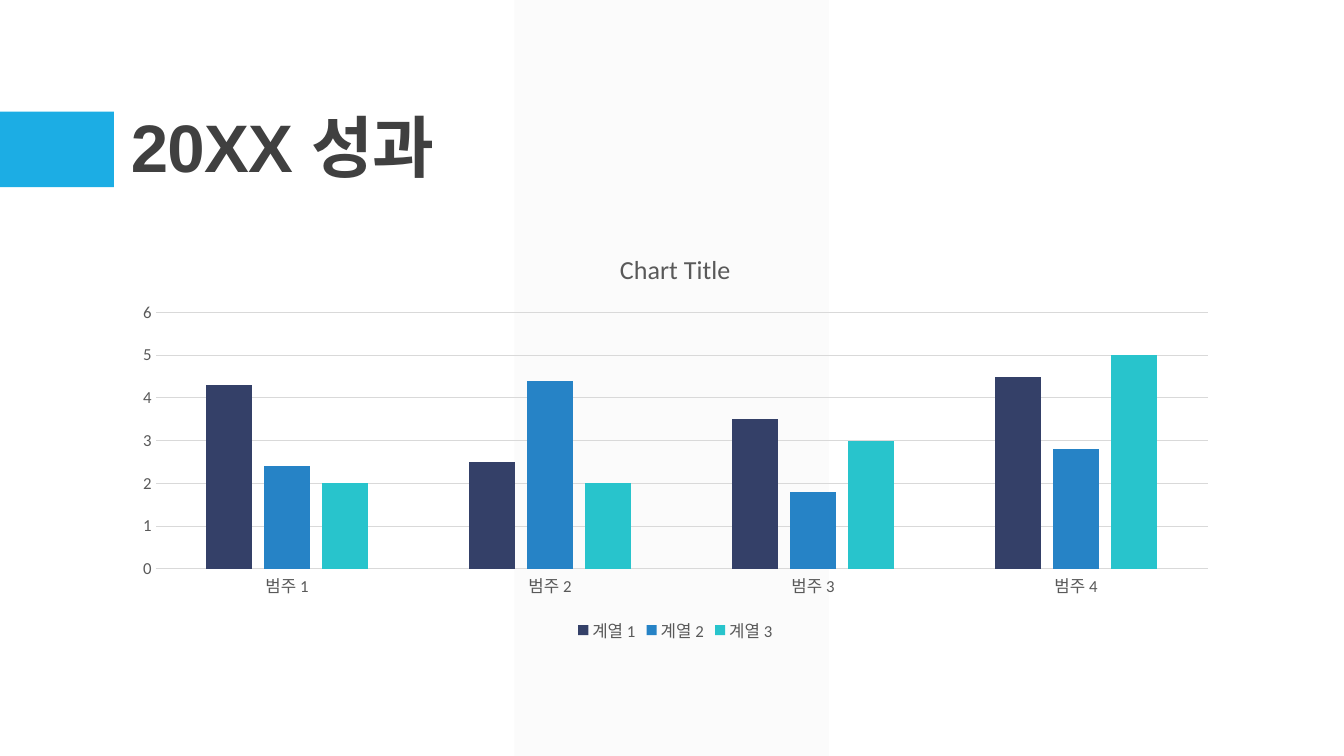
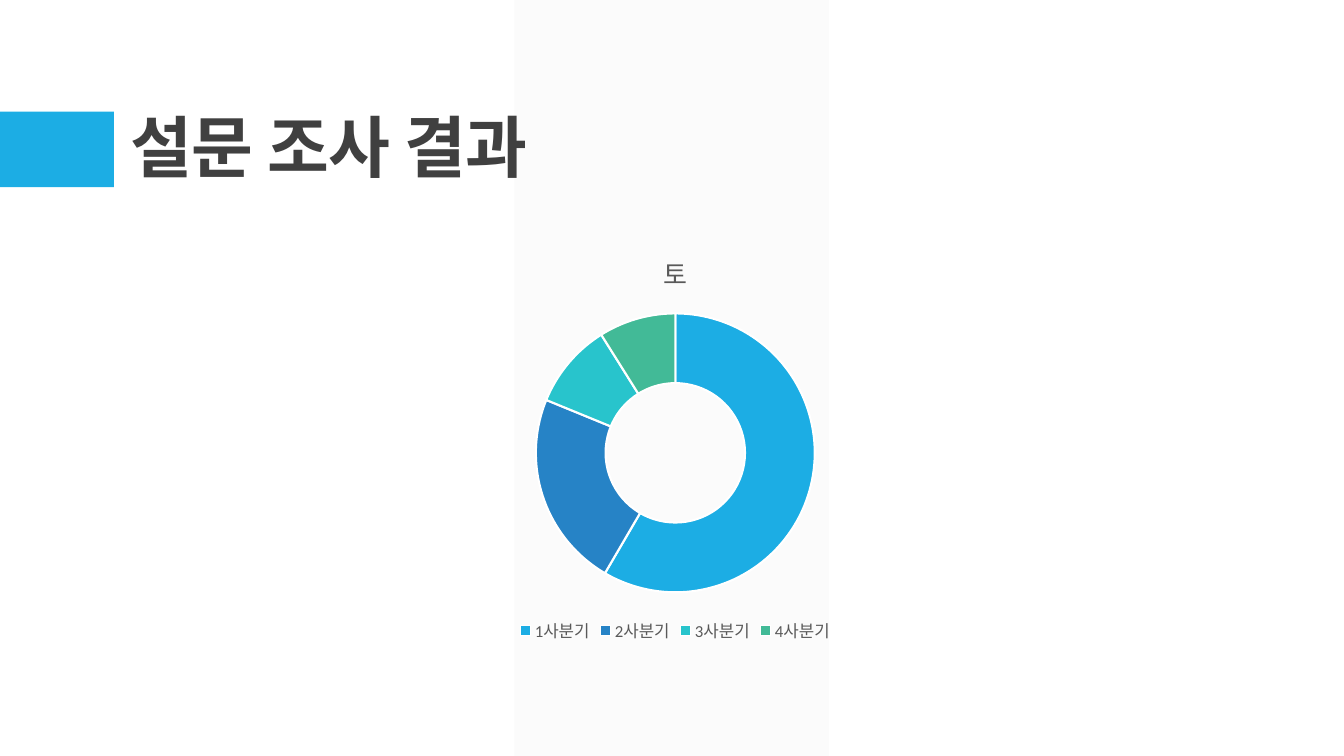
import dataclasses

import lxml.etree
import pptx
import pptx.chart.data
import pptx.dml.color
import pptx.enum.chart
import pptx.enum.shapes
import pptx.enum.text
import pptx.oxml.ns
import pptx.util

Pt = pptx.util.Pt
qn = pptx.oxml.ns.qn


@dataclasses.dataclass(frozen=True)
class Theme:
    title_font: str = "Arial"
    chart_font: str = "Calibri"
    title_size: float = 48
    chart_title_size: float = 18.6
    label_size: float = 12
    title_ink: str = "404040"
    label_ink: str = "595959"
    grid: str = "D9D9D9"
    band: str = "F2F2F2"
    white: str = "FFFFFF"
    sky: str = "1CADE4"
    navy: str = "344068"
    blue: str = "2683C6"
    teal: str = "28C4CC"
    green: str = "42BA97"


@dataclasses.dataclass(frozen=True)
class Box:
    left: float
    top: float
    width: float
    height: float

    def lengths(self):
        return [Pt(value) for value in dataclasses.astuple(self)]


THEME = Theme()
SLIDE_WIDTH, SLIDE_HEIGHT = 960, 540
BAND_BOX = Box(367.5, 0, 224.5, SLIDE_HEIGHT)
ACCENT_BOX = Box(0, 79.7, 81.4, 54)
TITLE_BOX = Box(86.4, 22.3, 792, 114.5)
CHART_BOX = Box(86.4, 166, 792, 296)


def rgb(color):
    return pptx.dml.color.RGBColor.from_string(color)


def set_font(font, size, color, name, bold=False):
    font.size = Pt(size)
    font.color.rgb = rgb(color)
    font.name = name
    font.bold = bold


def paint(fill, color):
    fill.solid()
    fill.fore_color.rgb = rgb(color)


def add_block(slide, box, preset, color):
    block = slide.shapes.add_shape(preset, *box.lengths())
    block.shadow.inherit = False
    paint(block.fill, color)
    block.line.fill.background()
    return block


def add_backdrop(slide):
    presets = pptx.enum.shapes.MSO_SHAPE
    band = add_block(slide, BAND_BOX, presets.PARALLELOGRAM, THEME.band)
    band.adjustments[0] = 0
    band_color = band.fill._xPr.find(qn("a:solidFill"))[0]
    lxml.etree.SubElement(band_color, qn("a:alpha"), val="30000")
    add_block(slide, ACCENT_BOX, presets.RECTANGLE, THEME.sky)


def add_title(slide, box, text):
    frame = slide.shapes.add_textbox(*box.lengths()).text_frame
    frame.word_wrap = True
    frame.vertical_anchor = pptx.enum.text.MSO_ANCHOR.BOTTOM
    heading = frame.paragraphs[0]
    heading.text = text
    heading.line_spacing = 0.9
    set_font(heading.font, THEME.title_size, THEME.title_ink, THEME.title_font, True)
    heading._p.pPr.find(qn("a:defRPr")).set("spc", "-50")


def add_chart(slide, box, kind, title, categories, series):
    data = pptx.chart.data.CategoryChartData()
    data.categories = categories
    for name, values in series:
        data.add_series(name, values)
    chart = slide.shapes.add_chart(kind, *box.lengths(), data).chart
    set_font(chart.font, THEME.label_size, THEME.label_ink, THEME.chart_font)
    chart.has_title = True
    chart.chart_title.include_in_layout = False
    caption = chart.chart_title.text_frame.paragraphs[0]
    caption.text = title
    set_font(caption.font, THEME.chart_title_size, THEME.label_ink, THEME.chart_font)
    chart.has_legend = True
    chart.legend.position = pptx.enum.chart.XL_LEGEND_POSITION.BOTTOM
    chart.legend.include_in_layout = False
    return chart


def add_performance_columns(slide, box):
    chart = add_chart(
        slide, box, pptx.enum.chart.XL_CHART_TYPE.COLUMN_CLUSTERED, "Chart Title",
        ["범주 1", "범주 2", "범주 3", "범주 4"],
        [
            ("계열 1", (4.3, 2.5, 3.5, 4.5)),
            ("계열 2", (2.4, 4.4, 1.8, 2.8)),
            ("계열 3", (2, 2, 3, 5)),
        ],
    )
    columns = chart.plots[0]
    columns.gap_width = 219
    columns.overlap = -27
    columns.vary_by_categories = False
    for series, color in zip(columns.series, (THEME.navy, THEME.blue, THEME.teal)):
        paint(series.format.fill, color)
    for axis in (chart.category_axis, chart.value_axis):
        axis.major_tick_mark = pptx.enum.chart.XL_TICK_MARK.NONE
        axis.minor_tick_mark = pptx.enum.chart.XL_TICK_MARK.NONE
    chart.value_axis.format.line.fill.background()
    for line in (chart.category_axis.format.line,
                 chart.value_axis.major_gridlines.format.line):
        line.color.rgb = rgb(THEME.grid)
        line.width = Pt(0.75)


def add_survey_ring(slide, box):
    chart = add_chart(
        slide, box, pptx.enum.chart.XL_CHART_TYPE.DOUGHNUT, "토",
        ["1사분기", "2사분기", "3사분기", "4사분기"],
        [("Series 1", (59, 23, 10, 9))],
    )
    ring = chart.plots[0]
    ring.vary_by_categories = True
    ring._element.find(qn("c:holeSize")).set("val", "75")
    quarter_colors = (THEME.sky, THEME.blue, THEME.teal, THEME.green)
    for index, color in enumerate(quarter_colors):
        quarter = ring.series[0].points[index].format
        paint(quarter.fill, color)
        quarter.line.color.rgb = rgb(THEME.white)
        quarter.line.width = Pt(1.5)


def add_chart_slide(deck, title, add_content):
    slide = deck.slides.add_slide(deck.slide_layouts[6])
    add_backdrop(slide)
    add_title(slide, TITLE_BOX, title)
    add_content(slide, CHART_BOX)


def main():
    deck = pptx.Presentation()
    deck.slide_width = Pt(SLIDE_WIDTH)
    deck.slide_height = Pt(SLIDE_HEIGHT)
    add_chart_slide(deck, "20XX 성과", add_performance_columns)
    add_chart_slide(deck, "설문 조사 결과", add_survey_ring)
    deck.save("out.pptx")


if __name__ == "__main__":
    main()
